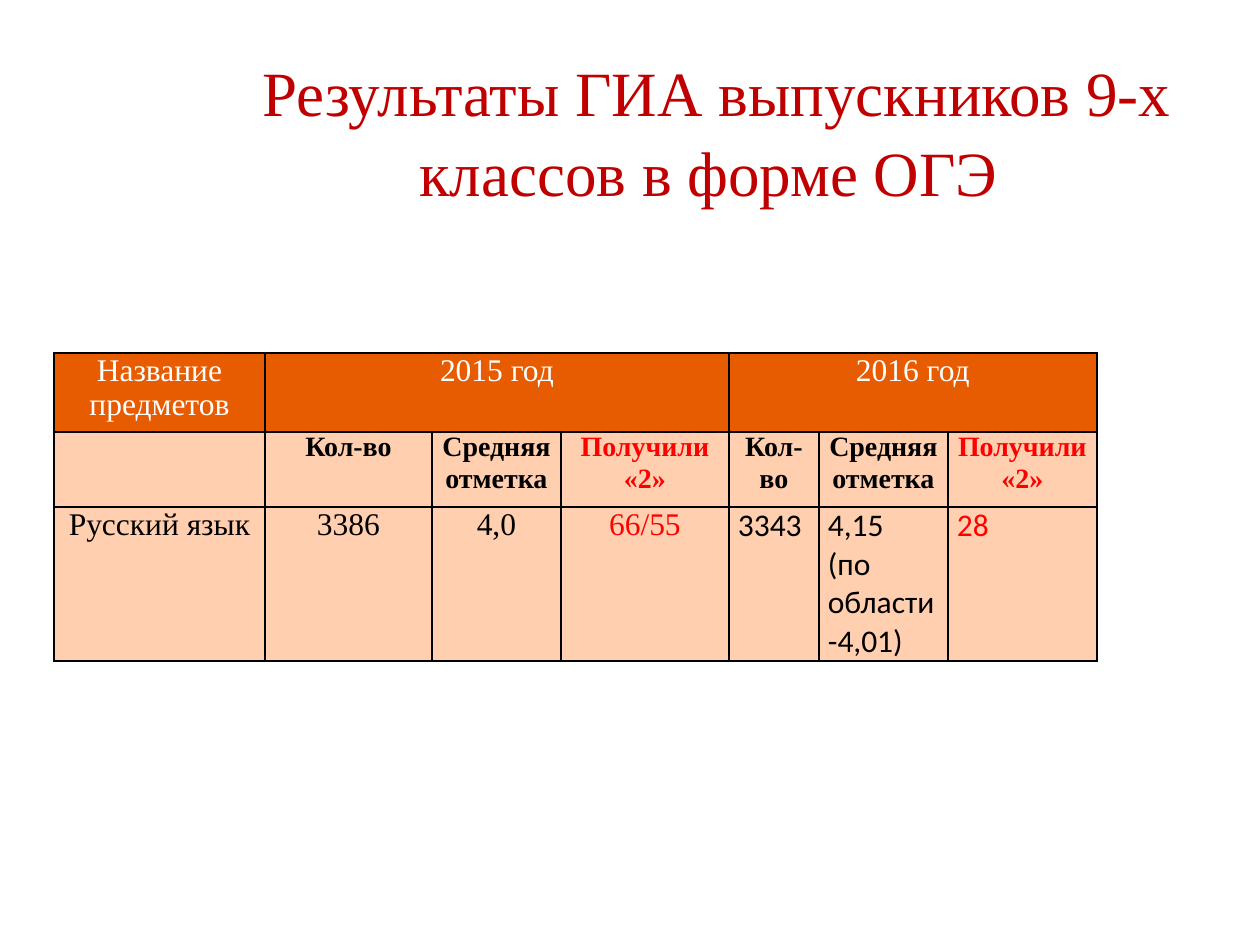
import pptx
import pptx.dml.color
import pptx.enum.text
import pptx.oxml.ns
import pptx.util
from lxml import etree

PX = 914400 // 126
RGB = pptx.dml.color.RGBColor
DARK_RED = RGB(0xC0, 0x00, 0x00)
RED = RGB(0xFF, 0x00, 0x00)
BLACK = RGB(0x00, 0x00, 0x00)
WHITE = RGB(0xFF, 0xFF, 0xFF)
ORANGE = RGB(0xE7, 0x5C, 0x01)
PEACH = RGB(0xFF, 0xCF, 0xAF)
SERIF, SANS = "Times New Roman", "Calibri"
CENTER = pptx.enum.text.PP_ALIGN.CENTER
LEFT = pptx.enum.text.PP_ALIGN.LEFT

COLUMN_WIDTHS = [211, 167, 129, 168, 90, 129, 149]
ROW_HEIGHTS = [79, 75, 154]
YEAR_COLUMNS = ["Кол-во", "Средняя отметка", "Получили «2»"]
ROWS = [
    ["Название предметов", "2015 год", "", "", "2016 год", "", ""],
    [""] + YEAR_COLUMNS * 2,
    ["Русский язык", "3386", "4,0", "66/55",
     "3343", "4,15\n(по области-4,01)", "28"],
]
FAILED_COLUMNS = (3, 6)
FIRST_2016_COLUMN = 4


def px(length):
    return pptx.util.Emu(length * PX)


def write(frame, text, size, color, font=SERIF, bold=False, align=CENTER, after=0):
    frame.text = text
    for paragraph in frame.paragraphs:
        paragraph.alignment = align
        paragraph.space_after = pptx.util.Pt(after)
        paragraph.font.size = pptx.util.Pt(size)
        for run in paragraph.runs:
            run.font.name = font
            run.font.size = pptx.util.Pt(size)
            run.font.bold = bold
            run.font.color.rgb = color


def add_title(slide):
    title = slide.shapes.add_textbox(px(207), px(35), px(1019), px(189))
    frame = title.text_frame
    frame.word_wrap = True
    frame.vertical_anchor = pptx.enum.text.MSO_ANCHOR.MIDDLE
    # The closing space takes part in centring the second line.
    write(frame, "Результаты ГИА выпускников 9-х классов в форме ОГЭ ", 36, DARK_RED)
    frame.paragraphs[0].line_spacing = 1.05


def add_borders(cell):
    properties = cell._tc.get_or_add_tcPr()
    qn = pptx.oxml.ns.qn
    for side in ("lnL", "lnR", "lnT", "lnB"):
        line = etree.SubElement(properties, qn(f"a:{side}"), w="12700")
        fill = etree.SubElement(line, qn("a:solidFill"))
        etree.SubElement(fill, qn("a:srgbClr"), val=str(BLACK))


def style_cell(cell, text, row, column):
    cell.margin_left = cell.margin_right = px(9)
    cell.margin_top = cell.margin_bottom = 0
    add_borders(cell)
    cell.fill.solid()
    cell.fill.fore_color.rgb = ORANGE if row == 0 else PEACH
    color = RED if column in FAILED_COLUMNS else BLACK
    if row == 0:
        write(cell.text_frame, text, 18, WHITE, after=6)
    elif row == 1:
        write(cell.text_frame, text, 16, color, bold=True, after=6)
    elif column < FIRST_2016_COLUMN:
        write(cell.text_frame, text, 18, color, after=6)
    else:
        write(cell.text_frame, text, 18, color, font=SANS, align=LEFT)


def add_results(slide):
    results = slide.shapes.add_table(
        len(ROWS), len(COLUMN_WIDTHS), px(54), px(353),
        px(sum(COLUMN_WIDTHS)), px(sum(ROW_HEIGHTS))).table
    results.horz_banding = False
    for column, width in zip(results.columns, COLUMN_WIDTHS):
        column.width = px(width)
    for row, height in zip(results.rows, ROW_HEIGHTS):
        row.height = px(height)
    for first in (1, FIRST_2016_COLUMN):
        results.cell(0, first).merge(results.cell(0, first + 2))
    for row, texts in enumerate(ROWS):
        for column, text in enumerate(texts):
            style_cell(results.cell(row, column), text, row, column)


def main():
    deck = pptx.Presentation()
    deck.slide_width, deck.slide_height = px(1260), px(945)
    slide = deck.slides.add_slide(deck.slide_layouts[6])
    add_title(slide)
    add_results(slide)
    deck.save("out.pptx")


if __name__ == "__main__":
    main()
